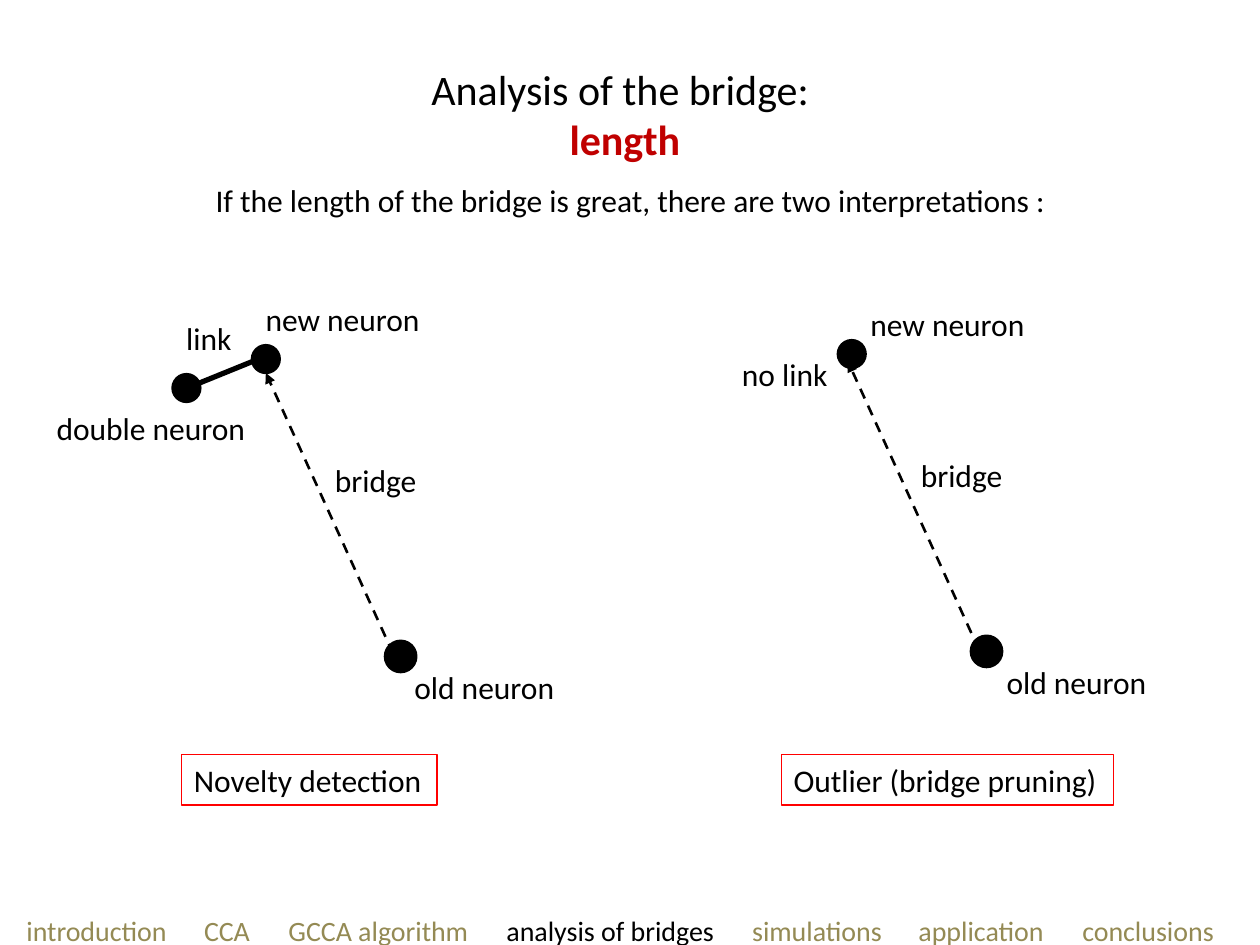
from dataclasses import dataclass

from lxml import etree
from pptx import Presentation
from pptx.dml.color import RGBColor
from pptx.enum.dml import MSO_LINE
from pptx.enum.shapes import MSO_CONNECTOR, MSO_SHAPE
from pptx.enum.text import MSO_ANCHOR, MSO_AUTO_SIZE, PP_ALIGN
from pptx.oxml.ns import qn
from pptx.util import Inches, Pt

STRAIGHT = MSO_CONNECTOR.STRAIGHT
OVAL = MSO_SHAPE.OVAL
RECT = MSO_SHAPE.RECTANGLE
DASH = MSO_LINE.DASH
LEFT = PP_ALIGN.LEFT
CENTER = PP_ALIGN.CENTER
TOP = MSO_ANCHOR.TOP
NO_FIT = MSO_AUTO_SIZE.NONE


@dataclass(frozen=True)
class Theme:
    """Font, colours and type sizes of the slide."""
    font: str = "Calibri"
    ink: str = "000000"
    accent: str = "C00000"
    frame: str = "FF0000"
    muted: str = "948A54"
    title: int = 24
    body: int = 18
    nav: int = 16


THEME = Theme()
DOT = 0.24
TEXT_H = 0.4
SECTIONS = [("introduction", 0.21), ("CCA", 1.62), ("GCCA algorithm", 2.29),
            ("analysis of bridges", 4.02), ("simulations", 5.97),
            ("application", 7.29), ("conclusions", 8.59)]
CURRENT = "analysis of bridges"


def rgb(color):
    """Turn a hex string into a colour."""
    return RGBColor.from_string(color)


def place(shape, left, top, width, height):
    """Move and size a shape, in inches."""
    shape.left, shape.top = Inches(left), Inches(top)
    shape.width, shape.height = Inches(width), Inches(height)


def add_run(p, text, size=THEME.body, color=THEME.ink, bold=False):
    """Add a formatted run to a paragraph."""
    r = p.add_run()
    r.text = text
    r.font.name = THEME.font
    r.font.size = Pt(size)
    r.font.bold = bold
    r.font.color.rgb = rgb(color)


def write(shape, text, wrap=False, align=LEFT, **fmt):
    """Write one paragraph into a shape and return it."""
    tf = shape.text_frame
    tf.word_wrap = wrap
    tf.auto_size = NO_FIT
    tf.vertical_anchor = TOP
    p = tf.paragraphs[0]
    p.alignment = align
    p.space_before = Pt(0)
    add_run(p, text, **fmt)
    return p


def add_label(shapes, text, left, top, width):
    """Add a one-line text label."""
    write(shapes.add_textbox(Inches(left), Inches(top), Inches(width), Inches(TEXT_H)), text)


def add_neuron(shapes, left, top, outline=False):
    """Add a neuron as a black dot."""
    sp = shapes.add_shape(OVAL, Inches(left), Inches(top), Inches(DOT), Inches(DOT))
    sp.shadow.inherit = False
    sp.fill.solid()
    sp.fill.fore_color.rgb = rgb(THEME.ink)
    if outline:
        sp.line.color.rgb = rgb(THEME.ink)
        sp.line.width = Pt(2)
    else:
        sp.line.fill.background()


def add_line(shapes, start, end, width, arrow=False):
    """Add a line, dashed and with a head at its end if it is an arrow."""
    cx = shapes.add_connector(STRAIGHT, *map(Inches, start + end))
    cx.line.color.rgb = rgb(THEME.ink)
    cx.line.width = Pt(width)
    if arrow:
        cx.line.dash_style = DASH
        etree.SubElement(cx.line._get_or_add_ln(), qn("a:tailEnd"), type="triangle")
    etree.SubElement(cx._element.spPr, qn("a:effectLst"))


def add_conclusion(shapes, text, left, width):
    """Add a red-framed conclusion."""
    sp = shapes.add_shape(RECT, Inches(left), Inches(5.99), Inches(width), Inches(TEXT_H))
    sp.shadow.inherit = False
    sp.fill.background()
    sp.line.color.rgb = rgb(THEME.frame)
    sp.line.width = Pt(0.75)
    write(sp, text)


def add_bridge(shapes, arrow, new, old, labels):
    """Add a group with a bridge from the old neuron to the new one."""
    group = shapes.add_group_shape().shapes
    add_line(group, *arrow, 1.5, arrow=True)
    add_neuron(group, *old, outline=True)
    add_neuron(group, *new)
    for label in labels:
        add_label(group, *label)
    return group


def add_heading(s):
    """Fill the title and the introductory sentence."""
    title, body = s.placeholders
    place(title, 3.31, 0.45, 3.3, 0.91)
    write(title, "Analysis of the bridge: ", align=CENTER, size=THEME.title)
    p = title.text_frame.add_paragraph()
    p.alignment = CENTER
    add_run(p, "length", size=THEME.title, color=THEME.accent, bold=True)

    place(body, 0.4, 1.39, 9.21, TEXT_H)
    p = write(body, "If the length of the bridge is great, there are two interpretations :",
              wrap=True, align=CENTER)
    pPr = p._p.get_or_add_pPr()
    pPr.set("marL", "0")
    pPr.set("indent", "0")
    etree.SubElement(pPr, qn("a:buNone"))


def add_navigation(shapes):
    """Add the section names on tab stops, the current one in black."""
    sp = shapes.add_textbox(0, Inches(7.2), Inches(10), Inches(0.37))
    tf = sp.text_frame
    tf.word_wrap = True
    start = SECTIONS[0][1]
    tf.margin_left = Inches(start)
    p = tf.paragraphs[0]
    tabs = etree.SubElement(p._p.get_or_add_pPr(), qn("a:tabLst"))
    for i, (name, left) in enumerate(SECTIONS):
        if i:
            etree.SubElement(tabs, qn("a:tab"), pos=str(Inches(left - start)), algn="l")
        color = THEME.ink if name == CURRENT else THEME.muted
        add_run(p, "\t" + name if i else name, size=THEME.nav, color=color)


def main():
    """Build and save the slide."""
    prs = Presentation()
    prs.slide_width, prs.slide_height = Inches(10), Inches(7.5)
    s = prs.slides.add_slide(prs.slide_layouts[1])
    add_heading(s)
    add_conclusion(s.shapes, "Novelty detection", 1.44, 2.03)
    add_bridge(s.shapes, ((7.83, 5.29), (6.73, 2.87)), (6.64, 2.69), (7.71, 5.05),
               [("bridge", 7.21, 3.57, 0.86), ("no link", 5.79, 2.77, 0.92),
                ("old neuron", 7.89, 5.21, 1.36), ("new neuron", 6.81, 2.37, 1.44)])
    novelty = add_bridge(s.shapes, ((3.18, 5.32), (2.11, 2.96)), (1.99, 2.73), (3.06, 5.09),
                         [("bridge", 2.56, 3.61, 0.86), ("link", 1.38, 2.48, 0.56),
                          ("old neuron", 3.19, 5.25, 1.36), ("new neuron", 2.01, 2.33, 1.44),
                          ("double neuron", 0.35, 3.2, 1.72)])
    add_line(novelty, (2.1, 2.83), (1.46, 3.09), 3)
    add_neuron(novelty, 1.36, 2.96)
    add_conclusion(s.shapes, "Outlier (bridge pruning)", 6.2, 2.64)
    add_navigation(s.shapes)
    prs.save("out.pptx")


if __name__ == "__main__":
    main()
